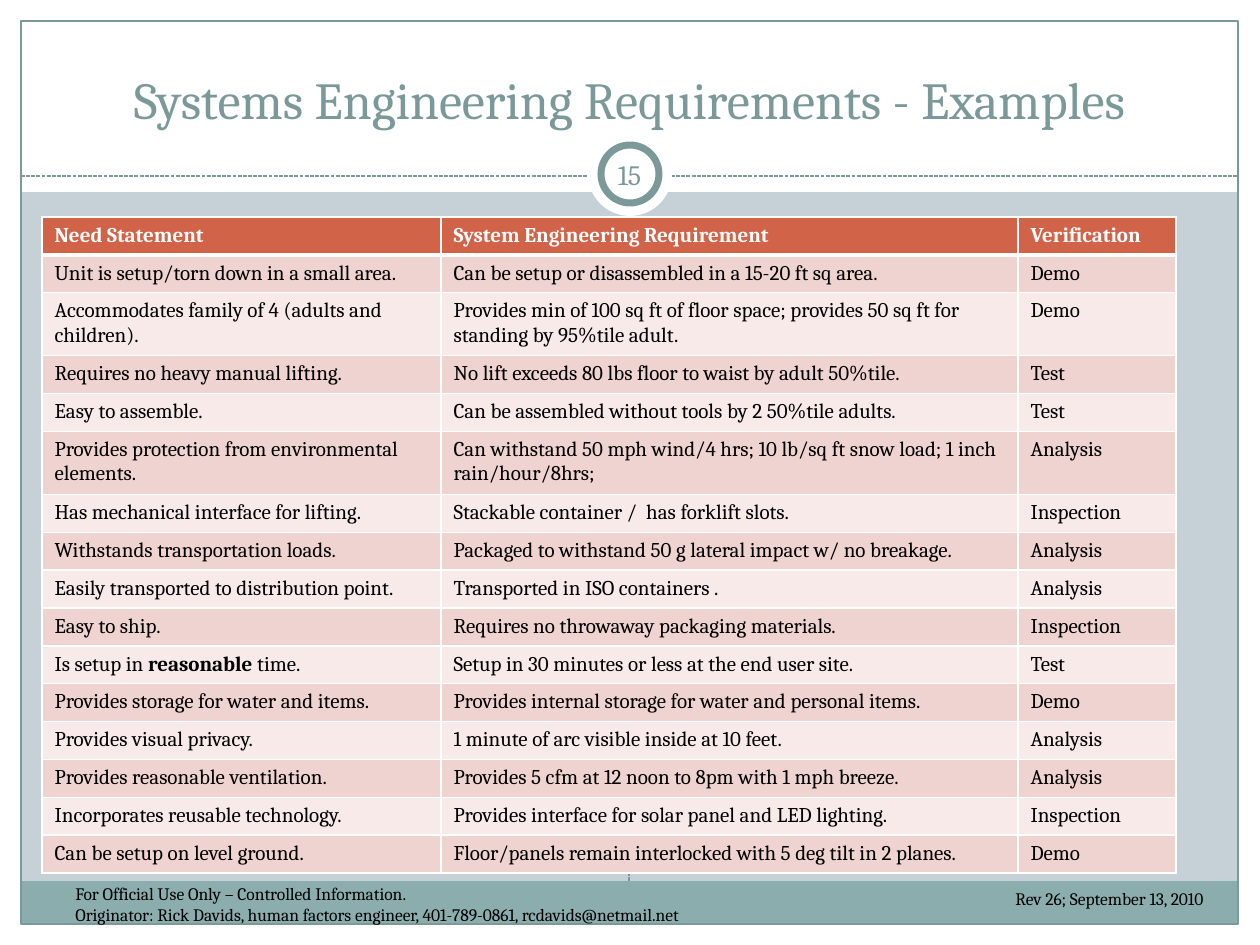
import dataclasses

import lxml.etree
import pptx
import pptx.dml.color
import pptx.enum.dml
import pptx.enum.shapes
import pptx.enum.text
import pptx.oxml.ns
import pptx.util

EMU_PER_PX = 914400 / 126
SHAPES = pptx.enum.shapes.MSO_SHAPE
ALIGN = pptx.enum.text.PP_ALIGN
ANCHOR = pptx.enum.text.MSO_ANCHOR


@dataclasses.dataclass(frozen=True)
class Theme:
    font: str = "Cambria"
    background: str = "C5D1D7"
    white: str = "FFFFFF"
    black: str = "000000"
    frame: str = "7C999A"
    footer: str = "8CADAE"
    stem: str = "646B86"
    header: str = "D16349"
    bands: tuple = ("EED3D0", "F7EAE9")
    title_size: float = 29.7
    number_size: float = 16
    table_size: float = 12
    footer_size: float = 10


THEME = Theme()

HEADINGS = ("Need Statement", "System Engineering Requirement", "Verification")
# A part between double asterisks is bold.
REQUIREMENTS = (
    ("Unit is setup/torn down in a small area.",
     "Can be setup or disassembled in a 15-20 ft sq area.", "Demo"),
    ("Accommodates family of 4 (adults and children).",
     "Provides min of 100 sq ft of floor space; provides 50 sq ft for standing by 95%tile adult.",
     "Demo"),
    ("Requires no heavy manual lifting.",
     "No lift exceeds 80 lbs floor to waist by adult 50%tile.", "Test"),
    ("Easy to assemble.", "Can be assembled without tools by 2 50%tile adults.", "Test"),
    ("Provides protection from environmental elements.",
     "Can withstand 50 mph wind/4 hrs; 10 lb/sq ft snow load; 1 inch rain/hour/8hrs;",
     "Analysis"),
    ("Has mechanical interface for lifting.",
     "Stackable container /  has forklift slots.", "Inspection"),
    ("Withstands transportation loads.",
     "Packaged to withstand 50 g lateral impact w/ no breakage.", "Analysis"),
    ("Easily transported to distribution point.", "Transported in ISO containers .", "Analysis"),
    ("Easy to ship.", "Requires no throwaway packaging materials.", "Inspection"),
    ("Is setup in **reasonable** time.",
     "Setup in 30 minutes or less at the end user site.", "Test"),
    ("Provides storage for water and items.",
     "Provides internal storage for water and personal items.", "Demo"),
    ("Provides visual privacy.", "1 minute of arc visible inside at 10 feet.", "Analysis"),
    ("Provides reasonable ventilation.",
     "Provides 5 cfm at 12 noon to 8pm with 1 mph breeze.", "Analysis"),
    ("Incorporates reusable technology.",
     "Provides interface for solar panel and LED lighting.", "Inspection"),
    ("Can be setup on level ground.",
     "Floor/panels remain interlocked with 5 deg tilt in 2 planes.", "Demo"),
)
COLUMN_WIDTHS = (399, 577, 158)
ROW_HEIGHT, TALL_ROW_HEIGHT = 36, 60
ONE_LINE_LIMIT = 70  # characters that fit on one line of the requirement column


def px(length):
    return pptx.util.Emu(round(length * EMU_PER_PX))


def rgb(color):
    return pptx.dml.color.RGBColor.from_string(color)


def add_panel(slide, box, fill=None, line=None, width=0.75, kind=SHAPES.RECTANGLE):
    panel = slide.shapes.add_shape(kind, *map(px, box))
    panel.shadow.inherit = False
    if fill:
        panel.fill.solid()
        panel.fill.fore_color.rgb = rgb(fill)
    else:
        panel.fill.background()
    if line:
        panel.line.color.rgb = rgb(line)
        panel.line.width = pptx.util.Pt(width)
    else:
        panel.line.fill.background()


def add_dashed_line(slide, start, end, color):
    rule = slide.shapes.add_connector(
        pptx.enum.shapes.MSO_CONNECTOR.STRAIGHT, *map(px, start + end))
    rule.line.color.rgb = rgb(color)
    rule.line.width = pptx.util.Pt(0.75)
    rule.line.dash_style = pptx.enum.dml.MSO_LINE.SQUARE_DOT
    lxml.etree.SubElement(rule._element.spPr, pptx.oxml.ns.qn("a:effectLst"))


def style_run(run, size, color, bold=False):
    run.font.name = THEME.font
    run.font.size = pptx.util.Pt(size)
    run.font.bold = bold
    run.font.color.rgb = rgb(color)


def add_text(slide, box, text, size, color, align=ALIGN.LEFT, anchor=ANCHOR.TOP, inset=None):
    frame = slide.shapes.add_textbox(*map(px, box)).text_frame
    frame.word_wrap = True
    frame.vertical_anchor = anchor
    if inset is not None:
        frame.margin_left = frame.margin_right = px(inset)
    frame.text = text
    for paragraph in frame.paragraphs:
        paragraph.alignment = align
        for run in paragraph.runs:
            style_run(run, size, color)


def set_borders(cell, bottom_width):
    """Draw white borders; call before filling, as the schema puts lines first."""
    properties = cell._tc.get_or_add_tcPr()
    for side, width in (("L", 1), ("R", 1), ("T", 1), ("B", bottom_width)):
        border = lxml.etree.SubElement(
            properties, pptx.oxml.ns.qn("a:ln" + side), w=str(pptx.util.Pt(width)))
        fill = lxml.etree.SubElement(border, pptx.oxml.ns.qn("a:solidFill"))
        lxml.etree.SubElement(fill, pptx.oxml.ns.qn("a:srgbClr"), val=THEME.white)


def fill_cell(cell, text, fill, color, header=False, bottom_width=1):
    set_borders(cell, bottom_width)
    cell.fill.solid()
    cell.fill.fore_color.rgb = rgb(fill)
    paragraph = cell.text_frame.paragraphs[0]
    for index, part in enumerate(text.split("**")):
        run = paragraph.add_run()
        run.text = part
        style_run(run, THEME.table_size, color, header or index % 2 == 1)


def add_requirements_table(slide, left, top):
    heights = [ROW_HEIGHT] + [
        TALL_ROW_HEIGHT if len(requirement) > ONE_LINE_LIMIT else ROW_HEIGHT
        for _, requirement, _ in REQUIREMENTS]
    table = slide.shapes.add_table(
        len(heights), len(HEADINGS), px(left), px(top),
        px(sum(COLUMN_WIDTHS)), px(sum(heights))).table
    for column, width in zip(table.columns, COLUMN_WIDTHS):
        column.width = px(width)
    for row, height in zip(table.rows, heights):
        row.height = px(height)
    for cell, heading in zip(table.rows[0].cells, HEADINGS):
        fill_cell(cell, heading, THEME.header, THEME.white, header=True, bottom_width=3)
    for index, texts in enumerate(REQUIREMENTS):
        for cell, text in zip(table.rows[index + 1].cells, texts):
            fill_cell(cell, text, THEME.bands[index % 2], THEME.black)


def add_backdrop(slide):
    slide.background.fill.solid()
    slide.background.fill.fore_color.rgb = rgb(THEME.background)
    for margin in ((0, 924, 1260, 21), (0, 0, 1260, 192),
                   (0, 0, 21, 945), (1239, 0, 21, 945)):
        add_panel(slide, margin, THEME.white)
    add_panel(slide, (21, 881, 1217, 43), THEME.footer)
    add_panel(slide, (21, 21, 1217, 903), line=THEME.frame)
    add_dashed_line(slide, (21, 176), (1239, 176), THEME.frame)
    add_panel(slide, (588, 132, 84, 84), THEME.white, kind=SHAPES.OVAL)
    add_panel(slide, (601, 145, 58, 58), THEME.white, THEME.frame, 4, SHAPES.OVAL)
    add_dashed_line(slide, (629, 881), (630, 217), THEME.stem)


def main():
    deck = pptx.Presentation()
    deck.slide_width, deck.slide_height = px(1260), px(945)
    slide = deck.slides.add_slide(deck.slide_layouts[6])
    add_backdrop(slide)
    add_text(slide, (42, 32, 1176, 104), "Systems Engineering Requirements - Examples",
             THEME.title_size, THEME.frame, ALIGN.CENTER, ANCHOR.BOTTOM)
    add_text(slide, (598, 144, 63, 60), "15", THEME.number_size, THEME.frame,
             ALIGN.CENTER, ANCHOR.MIDDLE, inset=6)
    add_requirements_table(slide, 42, 217)
    add_text(slide, (63, 877, 892, 47),
             "For Official Use Only – Controlled Information.\n"
             "Originator: Rick Davids, human factors engineer, 401-789-0861, rcdavids@netmail.net",
             THEME.footer_size, THEME.black)
    add_text(slide, (1003, 882, 257, 38), "Rev 26; September 13, 2010",
             THEME.footer_size, THEME.black)
    deck.save("out.pptx")


if __name__ == "__main__":
    main()
